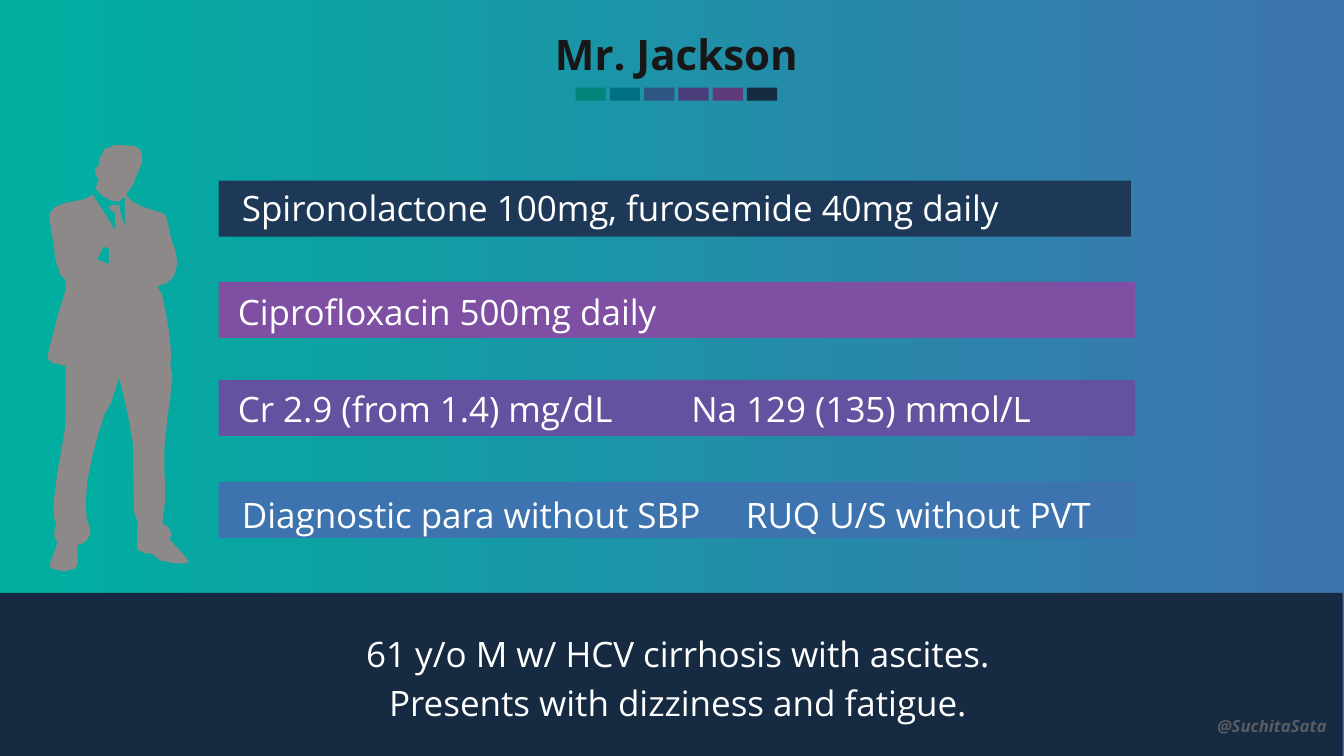
from lxml.etree import SubElement
from pptx import Presentation
from pptx.dml.color import RGBColor
from pptx.enum.shapes import MSO_SHAPE as Preset
from pptx.enum.text import MSO_ANCHOR as Anchor, MSO_AUTO_SIZE as AutoSize, PP_ALIGN as Align
from pptx.oxml.ns import qn
from pptx.util import Pt

FONT = "Open Sans"
WHITE, NAVY = "FFFFFF", "162B41"
SWATCHES = ["008378", "007182", "2E5683", "4B3D79", "5F3B7A", NAVY]

# bar top, bar width, bar fill, text left, text top, text
FINDINGS = [
    (129, 651.6, "1E3957", 164.2, 129, "Spironolactone 100mg, furosemide 40mg daily"),
    (201.4, 654.5, "7F4FA3", 161.3, 203, "Ciprofloxacin 500mg daily"),
    (271.4, 654.5, "6452A1", 161.3, 272.2, "Cr 2.9 (from 1.4) mg/dL\t\tNa 129 (135) mmol/L"),
    (344.2, 654.5, "3D73AF", 164.2, 348.5, "Diagnostic para without SBP\tRUQ U/S without PVT"),
]

# Outline points in hundredths of an inch
OUTLINE_UNIT = Pt(0.72)
MAN = [
    (47, 356), (52, 360), (65, 363), (65, 415), (64, 429), (62, 440), (57, 468),
    (53, 501), (54, 515), (56, 520), (54, 526), (54, 532), (57, 539), (51, 555),
    (49, 561), (51, 564), (63, 567), (75, 564), (77, 558), (77, 541), (84, 538),
    (88, 533), (90, 527), (86, 514), (85, 498), (87, 475), (92, 451), (98, 429),
    (104, 410), (107, 405), (110, 400), (118, 375), (121, 385), (127, 412),
    (132, 440), (132, 458), (133, 508), (137, 519), (136, 524), (136, 532),
    (136, 545), (144, 549), (149, 549), (153, 551), (159, 556), (174, 559),
    (186, 559), (187, 556), (181, 549), (168, 535), (170, 530), (168, 524),
    (161, 519), (164, 496), (164, 482), (163, 467), (163, 445), (166, 416),
    (169, 394), (171, 374), (169, 361), (170, 352), (167, 324), (161, 293),
    (156, 284), (165, 281), (172, 275), (174, 269), (176, 261), (174, 249),
    (170, 238), (165, 215), (161, 211), (153, 209), (141, 205), (130, 199),
    (125, 193), (132, 183), (135, 175), (141, 161), (141, 155), (139, 148),
    (133, 145), (122, 144), (114, 144), (104, 148), (99, 157), (98, 164),
    (94, 168), (95, 173), (98, 178), (95, 187), (101, 194), (110, 199),
    (118, 200), (124, 195), (124, 224), (120, 213), (119, 206), (119, 204),
    (112, 203), (107, 206), (114, 211), (114, 228), (106, 215), (92, 193),
    (91, 194), (83, 198), (66, 201), (55, 205), (49, 212), (50, 223),
    (53, 241), (55, 257), (60, 273), (65, 278), (65, 288), (56, 318), (49, 345),
]
ARM_GAP = [(96, 257), (101, 249), (102, 245), (108, 246), (108, 262)]


def rgb(code):
    return RGBColor.from_string(code)


def paint_background(page):
    fill = page.background.fill
    fill.gradient()
    fill.gradient_angle = 180
    for stop, code, position in zip(fill.gradient_stops, ("3D73AF", "00AFA0"), (0, 0.99)):
        stop.color.rgb = rgb(code)
        stop.position = position


def paint_shape(shape, code):
    shape.shadow.inherit = False
    shape.fill.solid()
    shape.fill.fore_color.rgb = rgb(code)
    shape.line.fill.background()


def add_bar(page, left, top, width, height, code):
    bar = page.shapes.add_shape(Preset.RECTANGLE, Pt(left), Pt(top), Pt(width), Pt(height))
    paint_shape(bar, code)


def add_man(page):
    builder = page.shapes.build_freeform(*MAN[0], scale=OUTLINE_UNIT)
    builder.add_line_segments(MAN[1:])
    builder.move_to(*ARM_GAP[0])
    builder.add_line_segments(ARM_GAP[1:])
    paint_shape(builder.convert_to_shape(), "8E8989")


def place(box, left, top, width, height):
    box.left, box.top, box.width, box.height = Pt(left), Pt(top), Pt(width), Pt(height)


def write(box, text, size, code, align, inset, bold=False, italic=False,
          anchor=Anchor.TOP, auto_size=AutoSize.SHAPE_TO_FIT_TEXT):
    """Fill a box with text; inset is the (side, top and bottom) margin in points."""
    frame = box.text_frame
    frame.text = text
    frame.word_wrap = True
    frame.auto_size = auto_size
    frame.vertical_anchor = anchor
    frame.margin_left = frame.margin_right = Pt(inset[0])
    frame.margin_top = frame.margin_bottom = Pt(inset[1])
    for para in frame.paragraphs:
        para.alignment = align
        for span in para.runs:
            font = span.font
            font.name, font.size = FONT, Pt(size)
            font.bold, font.italic = bold, italic
            font.color.rgb = rgb(code)


def add_text_box(page, left, top, width, height):
    return page.shapes.add_textbox(Pt(left), Pt(top), Pt(width), Pt(height))


def remove_bullets(box):
    for para in box.text_frame.paragraphs:
        props = para._p.get_or_add_pPr()
        props.set("marL", "0")
        props.set("indent", "0")
        SubElement(props, qn("a:buNone"))


def fade_text(box, percent):
    for color in box._element.iter(qn("a:srgbClr")):
        SubElement(color, qn("a:alpha")).set("val", str(percent * 1000))


def add_heading(page):
    title = page.shapes.title
    place(title, 332, 18.7, 302.4, 40.3)
    write(title, "Mr. Jackson", 30, "181717", Align.CENTER, (3.6, 1.5), bold=True)
    for index, code in enumerate(SWATCHES):
        add_bar(page, 411.1 + 24.5 * index, 62.6, 21.6, 9.4, code)


def add_findings(page):
    for bar_top, bar_width, code, *_ in FINDINGS:
        add_bar(page, 156.2, bar_top, bar_width, 40, code)
    for *_, left, top, text in FINDINGS:
        box = add_text_box(page, left, top, 630, 38.9)
        write(box, text, 25, WHITE, Align.LEFT, (8.6, 4.3))


def add_presentation_band(page):
    add_bar(page, 0, 423.4, 959, 118, NAVY)
    body = page.placeholders[1]
    # The body text sits in front of the band
    page.shapes._spTree.append(body._element)
    place(body, 64.8, 447.1, 838.8, 74.9)
    write(body, "61 y/o M w/ HCV cirrhosis with ascites.\nPresents with dizziness and fatigue.",
          25, WHITE, Align.CENTER, (9.4, 5), auto_size=AutoSize.NONE)
    remove_bullets(body)
    handle = add_text_box(page, 715.7, 507.6, 236.2, 22.3)
    write(handle, "@SuchitaSata", 12, "767171", Align.RIGHT, (4.3, 4.3),
          bold=True, italic=True, anchor=Anchor.MIDDLE)
    fade_text(handle, 70)


def main():
    deck = Presentation()
    deck.slide_width, deck.slide_height = Pt(960), Pt(540)
    page = deck.slides.add_slide(deck.slide_layouts[1])
    paint_background(page)
    add_heading(page)
    add_presentation_band(page)
    add_man(page)
    add_findings(page)
    deck.save("out.pptx")


if __name__ == "__main__":
    main()
